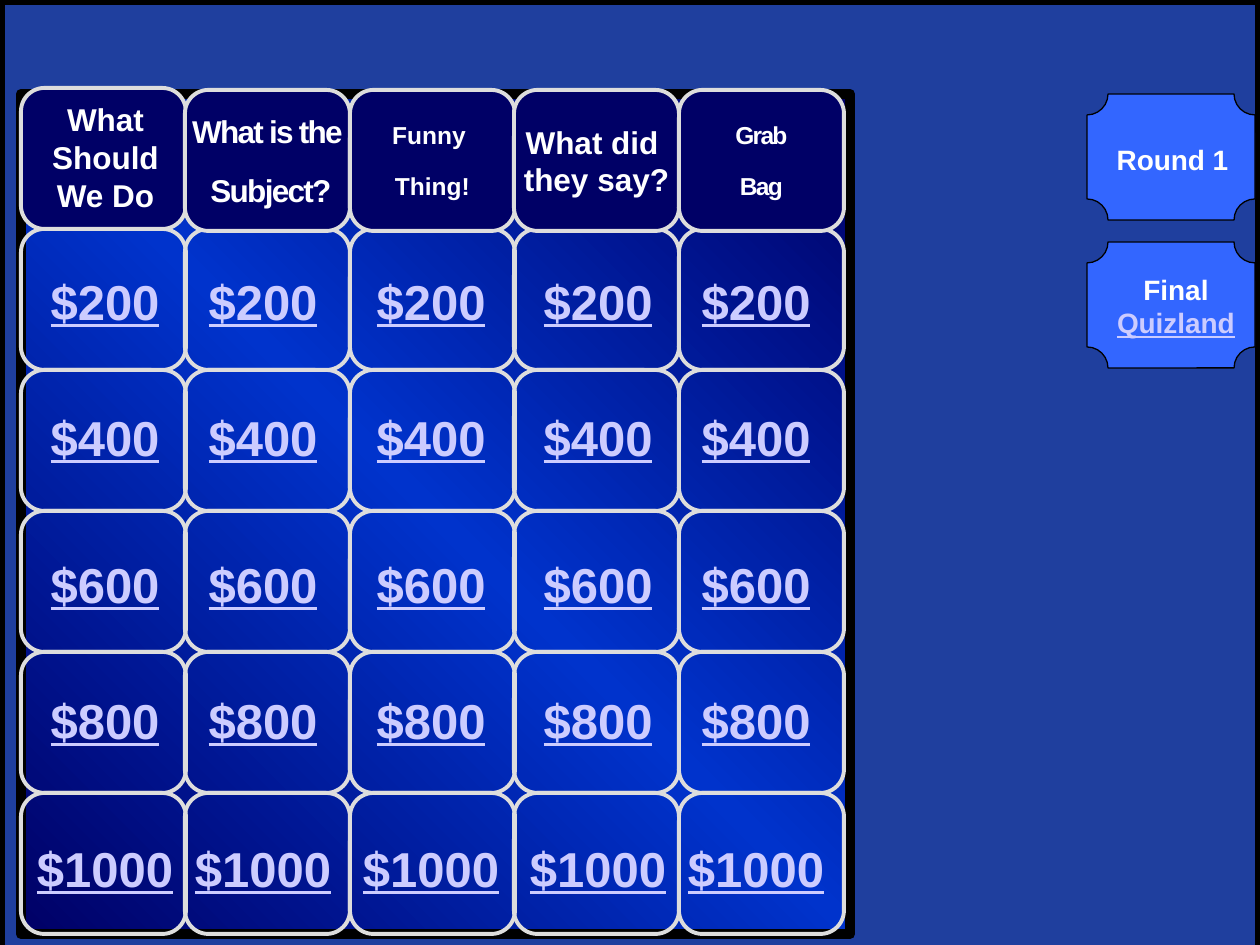
from copy import deepcopy

from lxml import etree
from pptx import Presentation, util as u
from pptx.dml.color import RGBColor
from pptx.enum import shapes, text
from pptx.oxml.ns import qn

BLACK = RGBColor(0x00, 0x00, 0x00)
WHITE = RGBColor(0xFF, 0xFF, 0xFF)
NAVY = RGBColor(0x00, 0x00, 0x66)
ROYAL = RGBColor(0x00, 0x33, 0xCC)
BLUE = RGBColor(0x33, 0x66, 0xFF)
SILVER = RGBColor(0xDD, 0xDD, 0xDD)
LAVENDER = RGBColor(0xCC, 0xCC, 0xFF)

FIRST_CATEGORY = "What Should We Do"
CATEGORIES = [
    (["What is the", " Subject?"], 18, 12, -1),
    (["Funny ", "Thing!"], 14, 12, 0),
    (["What did ", "they say?"], 18, 0, 0),
    (["Grab", "Bag"], 14, 12, -1),
]
PRIZES = [("$200", 265), ("$400", 401), ("$600", 548), ("$800", 684), ("$1000", 832)]
PRIZE_LEFTS = [21, 179, 347, 514, 672]
BUTTONS = [
    (94, (1086, 136, 173, 47), [("Round 1", WHITE, False)]),
    (242, (1097, 266, 158, 81), [("Final ", WHITE, False), ("Quizland", LAVENDER, True)]),
]
GRID_LEFT, GRID_TOP, CELL_W, CELL_H = 21, 229, 165, 141
COLUMN_LEFTS = [GRID_LEFT + i * 329 // 2 for i in range(5)]

prs = Presentation()
prs.slide_width, prs.slide_height = u.Inches(10), u.Inches(7.5)
slide = prs.slides.add_slide(prs.slide_layouts[6])


def px(*values):
    return [u.Emu(round(v * 914400 / 126)) for v in values]


def add_box(kind, box, fill, line, width):
    sp = slide.shapes.add_shape(kind, *px(*box))
    sp.shadow.inherit = False
    if fill is None:
        sp.fill.background()
    else:
        sp.fill.solid()
        sp.fill.fore_color.rgb = fill
    sp.line.color.rgb = line
    sp.line.width = u.Pt(width)
    return sp


def add_cell(left, top, fill=None):
    return add_box(shapes.MSO_SHAPE.ROUNDED_RECTANGLE,
                   (left, top, CELL_W, CELL_H), fill, SILVER, 2.25)


def style(r, size, color, underline=False, spacing=0):
    r.font.name = "Arial"
    r.font.size = u.Pt(size)
    r.font.bold = True
    r.font.color.rgb = color
    if underline:
        r.font.underline = True
    if spacing:
        r.font._element.set("spc", str(spacing * 100))


def add_label(box, runs, size):
    tf = slide.shapes.add_textbox(*px(*box)).text_frame
    tf.word_wrap = True
    tf.auto_size = text.MSO_AUTO_SIZE.SHAPE_TO_FIT_TEXT
    p = tf.paragraphs[0]
    p.alignment = text.PP_ALIGN.CENTER
    for words, color, underline in runs:
        r = p.add_run()
        r.text = words
        style(r, size, color, underline)


def add_backdrop():
    rect = shapes.MSO_SHAPE.RECTANGLE
    add_box(rect, (0, 0, 1260, 945), BLACK, BLACK, 0.75)
    tint = add_box(rect, (0, 0, 1260, 955), BLUE, BLACK, 6)
    color = tint._element.spPr.find(qn("a:solidFill"))[0]
    etree.SubElement(color, qn("a:alpha")).set("val", "62000")

    board = add_box(rect, (21, 94, 829, 840), NAVY, BLACK, 6)
    board.fill.gradient()
    board.fill.gradient_angle = 45
    stops = board._element.spPr.find(qn("a:gradFill")).find(qn("a:gsLst"))
    stops.append(deepcopy(stops[-1]))
    for stop, position, color in zip(board.fill.gradient_stops, (0, 0.5, 1), (NAVY, ROYAL, NAVY)):
        stop.position = position
        stop.color.rgb = color


def add_category(left, lines, size, after, spacing):
    tf = add_cell(left, 90, NAVY).text_frame
    tf.word_wrap = False
    tf.vertical_anchor = text.MSO_ANCHOR.MIDDLE
    tf.text = "\n".join(lines)
    for p in tf.paragraphs:
        p.alignment = text.PP_ALIGN.CENTER
        p.space_after = u.Pt(after)
        style(p.runs[0], size, WHITE, spacing=spacing)


add_backdrop()
for left in COLUMN_LEFTS:
    for row in range(len(PRIZES)):
        add_cell(left, GRID_TOP + row * CELL_H)

add_cell(GRID_LEFT, 88, NAVY)
for left, category in zip(COLUMN_LEFTS[1:], CATEGORIES):
    add_category(left, *category)
add_label((32, 94, 147, 127), [(FIRST_CATEGORY, WHITE, False)], 18)

for prize, top in PRIZES:
    for left in PRIZE_LEFTS:
        add_label((left, top, 168, 72), [(prize, LAVENDER, True)], 28)

for top, label_box, runs in BUTTONS:
    add_box(shapes.MSO_SHAPE.PLAQUE, (1087, top, 168, 126), BLUE, BLACK, 0.75)
    add_label(label_box, runs, 16)

prs.save("out.pptx")
